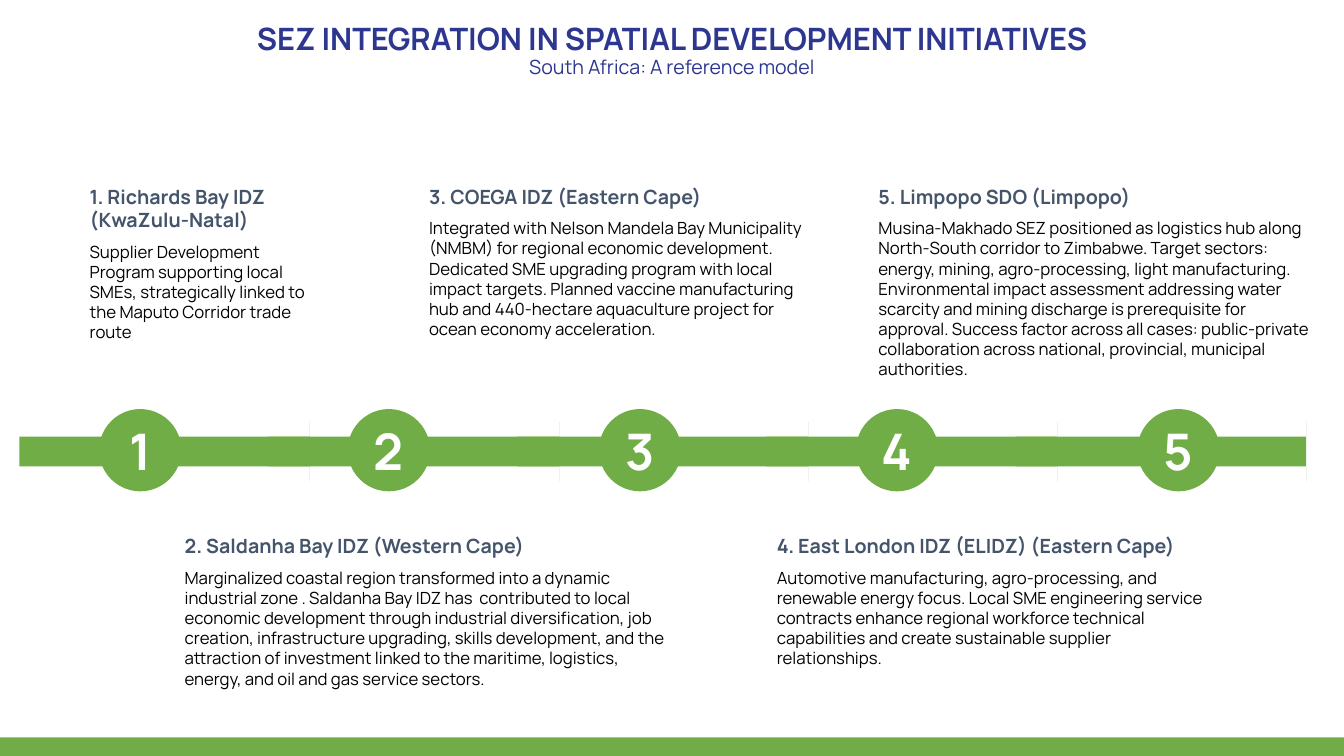
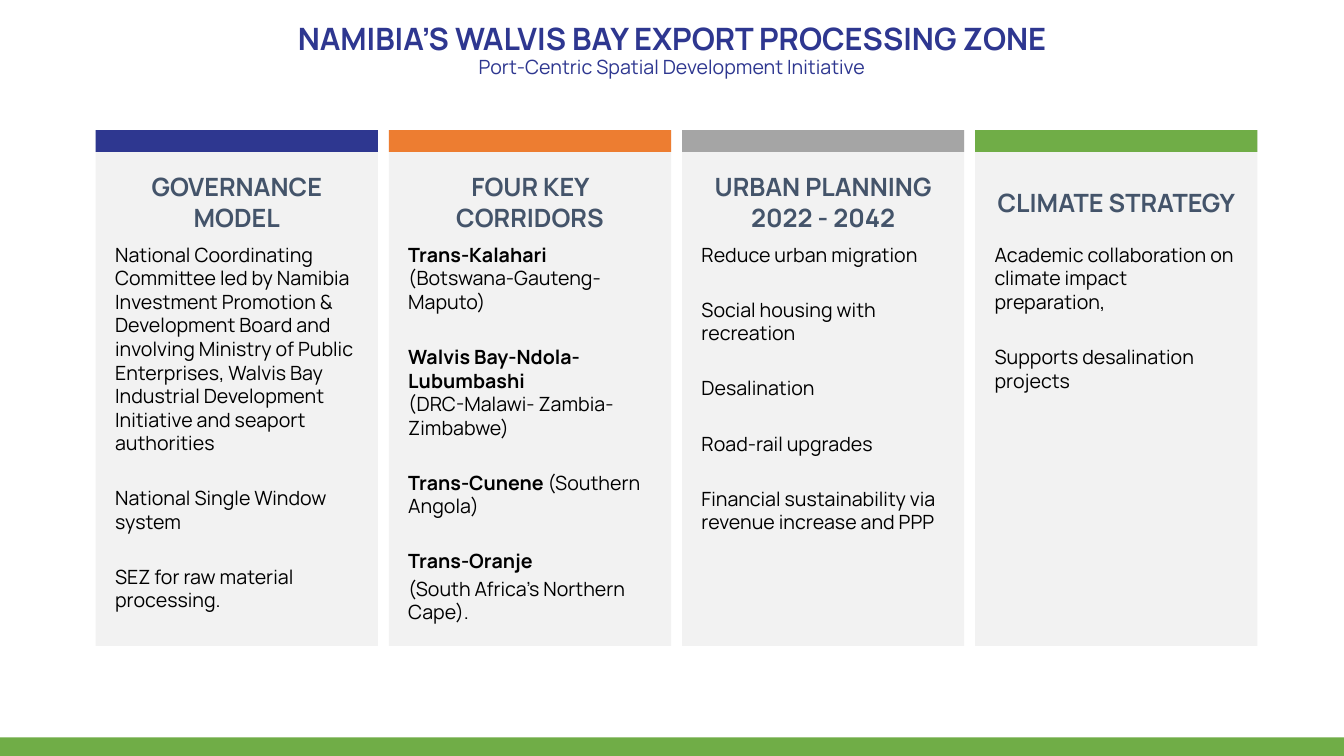
from dataclasses import dataclass

from lxml import etree
from pptx import Presentation
from pptx.dml.color import RGBColor
from pptx.enum.shapes import MSO_SHAPE
from pptx.enum.text import MSO_ANCHOR, MSO_AUTO_SIZE, PP_ALIGN
from pptx.oxml.ns import qn
from pptx.util import Inches, Pt

RECTANGLE = MSO_SHAPE.RECTANGLE
ELLIPSE = MSO_SHAPE.OVAL
ARROW = MSO_SHAPE.RIGHT_ARROW
TOP, MIDDLE = MSO_ANCHOR.TOP, MSO_ANCHOR.MIDDLE
LEFT, CENTER = PP_ALIGN.LEFT, PP_ALIGN.CENTER
NO_FIT = MSO_AUTO_SIZE.NONE

COLUMNS, ROWS = 160, 90
COMPARISON, TITLE_ONLY = 4, 5
FONT = "Manrope"
NAVY, GREEN, ORANGE, GRAY = "2E3790", "70AD47", "ED7D31", "A5A5A5"
SLATE, PALE, BLACK, WHITE = "44546A", "F2F2F2", "000000", "FFFFFF"
ITEM_GAP = 22.5


def color(value):
    return RGBColor.from_string(value)


@dataclass
class Para:
    text: str
    size: float = 14
    ink: str = BLACK
    bold: bool = False
    gap: float = 0
    tail: str = ""


class Deck:
    def __init__(self):
        self.show = Presentation()
        self.show.slide_width = Inches(13.333)
        self.show.slide_height = Inches(7.5)
        self.slide = None

    def box(self, left, top, width, height):
        column = self.show.slide_width / COLUMNS
        row = self.show.slide_height / ROWS
        return (round(left * column), round(top * row),
                round(width * column), round(height * row))

    def start(self, layout, title, subtitle):
        self.slide = self.show.slides.add_slide(self.show.slide_layouts[layout])
        heading = self.slide.shapes.title
        self.place(heading, 1.7, 2.3, 156.6, 9.4)
        self.typeset(heading, [Para(title, 22, NAVY, True), Para(subtitle, 14, NAVY)],
                     align=CENTER, spacing=0.9)
        self.shape(RECTANGLE, 0, 87.8, COLUMNS, 2.2, GREEN)

    def place(self, holder, *area):
        holder.left, holder.top, holder.width, holder.height = self.box(*area)

    def shape(self, kind, left, top, width, height, fill):
        drawn = self.slide.shapes.add_shape(kind, *self.box(left, top, width, height))
        drawn.shadow.inherit = False
        drawn.fill.solid()
        drawn.fill.fore_color.rgb = color(fill)
        drawn.line.fill.background()
        return drawn

    def text(self, left, top, width, height, paras, **layout):
        holder = self.slide.shapes.add_textbox(*self.box(left, top, width, height))
        self.typeset(holder, paras, **layout)

    def list(self, holder, left, top, width, height, paras):
        self.place(holder, left, top, width, height)
        holder.element.getparent().append(holder.element)
        self.typeset(holder, paras)

    def badge(self, left, top, size, label):
        circle = self.shape(ELLIPSE, left, top, size, size, GREEN)
        frame = circle.text_frame
        frame.margin_left = frame.margin_right = 0
        self.typeset(circle, [Para(label, 36, WHITE, True)], anchor=MIDDLE, align=CENTER)

    def typeset(self, holder, paras, anchor=TOP, align=LEFT, spacing=1.0):
        frame = holder.text_frame
        frame.word_wrap = True
        frame.auto_size = NO_FIT
        frame.vertical_anchor = anchor
        for index, para in enumerate(paras):
            line = frame.add_paragraph() if index else frame.paragraphs[0]
            properties = line._p.get_or_add_pPr()
            properties.set("marL", "0")
            properties.set("indent", "0")
            etree.SubElement(properties, qn("a:buNone"))
            line.alignment = align
            line.line_spacing = spacing
            line.space_before = Pt(para.gap if index else 0)
            for words, bold in ((para.text, para.bold), (para.tail, False)):
                if words:
                    run = line.add_run()
                    run.text = words
                    run.font.name = FONT
                    run.font.size = Pt(para.size)
                    run.font.bold = bold
                    run.font.color.rgb = color(para.ink)


UPPER, LOWER = 21.4, 63
ZONES = [
    (11.8, 9.5, UPPER, 28.8, "1. Richards Bay IDZ (KwaZulu-Natal)",
     "Supplier Development Program supporting local SMEs, strategically linked to "
     "the Maputo Corridor trade route"),
    (41.4, 20.8, LOWER, 61, "2. Saldanha Bay IDZ (Western Cape)",
     "Marginalized coastal region transformed into a dynamic industrial zone . "
     "Saldanha Bay IDZ has  contributed to local economic development through "
     "industrial diversification, job creation, infrastructure upgrading, skills "
     "development, and the attraction of investment linked to the maritime, "
     "logistics, energy, and oil and gas service sectors."),
    (71.3, 49.9, UPPER, 47, "3. COEGA IDZ (Eastern Cape)",
     "Integrated with Nelson Mandela Bay Municipality (NMBM) for regional economic "
     "development. Dedicated SME upgrading program with local impact targets. "
     "Planned vaccine manufacturing hub and 440-hectare aquaculture project for "
     "ocean economy acceleration."),
    (101.9, 91.3, LOWER, 53.3, "4. East London IDZ (ELIDZ) (Eastern Cape)",
     "Automotive manufacturing, agro-processing, and renewable energy focus. Local "
     "SME engineering service contracts enhance regional workforce technical "
     "capabilities and create sustainable supplier relationships."),
    (135.4, 103.4, UPPER, 54, "5. Limpopo SDO (Limpopo)",
     "Musina-Makhado SEZ positioned as logistics hub along North-South corridor to "
     "Zimbabwe. Target sectors: energy, mining, agro-processing, light "
     "manufacturing. Environmental impact assessment addressing water scarcity and "
     "mining discharge is prerequisite for approval. Success factor across all "
     "cases: public-private collaboration across national, provincial, municipal "
     "authorities."),
]


def items(*texts):
    return [Para(text, gap=ITEM_GAP) for text in texts]


def corridor(name, tail=""):
    return Para(name, bold=True, gap=ITEM_GAP, tail=tail)


PILLARS = [
    (NAVY, ["GOVERNANCE", "MODEL"], items(
        "National Coordinating Committee led by Namibia Investment Promotion & "
        "Development Board and involving Ministry of Public Enterprises, Walvis Bay "
        "Industrial Development Initiative and seaport authorities",
        "National Single Window system",
        "SEZ for raw material processing.")),
    (ORANGE, ["FOUR KEY CORRIDORS"], [
        corridor("Trans-Kalahari"),
        Para("(Botswana-Gauteng-Maputo)"),
        corridor("Walvis Bay-Ndola-Lubumbashi"),
        Para("(DRC-Malawi- Zambia- Zimbabwe)"),
        corridor("Trans-Cunene", " (Southern Angola)"),
        corridor("Trans-Oranje"),
        Para("(South Africa's Northern Cape).", gap=2.8)]),
    (GRAY, ["URBAN PLANNING", "2022 - 2042"], items(
        "Reduce urban migration",
        "Social housing with recreation",
        "Desalination",
        "Road-rail upgrades",
        "Financial sustainability via revenue increase and PPP")),
    (GREEN, ["CLIMATE STRATEGY"], items(
        "Academic collaboration on climate impact preparation,",
        "Supports desalination projects")),
]


def timeline(deck):
    deck.start(TITLE_ONLY, "SEZ INTEGRATION IN SPATIAL DEVELOPMENT INITIATIVES",
               "South Africa: A reference model")
    for step in reversed(range(len(ZONES))):
        segment = deck.shape(ARROW, 2.3 + 29.65 * step, 50.2, 34.6, 7.1, GREEN)
        segment.adjustments[0] = 0.5
        segment.adjustments[1] = 0
    for number, (badge_left, left, top, width, zone, story) in enumerate(ZONES, 1):
        deck.badge(badge_left, 48.7, 9.8, str(number))
        deck.text(left, top, width, 24,
                  [Para(zone, 14, SLATE, True), Para(story, 12, gap=7)])


def pillars(deck):
    deck.start(COMPARISON, "NAMIBIA’S WALVIS BAY EXPORT PROCESSING ZONE",
               "Port-Centric Spatial Development Initiative")
    bodies = [holder for holder in deck.slide.placeholders
              if holder.placeholder_format.idx]
    for index, (accent, heading, points) in enumerate(PILLARS):
        left = 11.4 + 34.9 * index
        deck.shape(RECTANGLE, left, 15.5, 33.6, 61.4, PALE)
        deck.shape(RECTANGLE, left, 15.5, 33.6, 2.6, accent)
        deck.text(left + 1.1, 19.8, 31.4, 8.5,
                  [Para(line, 18, SLATE, True) for line in heading],
                  anchor=MIDDLE, align=CENTER)
        deck.list(bodies[index], left + 1.1, 28.3, 31.4, 48.7, points)


def main():
    deck = Deck()
    timeline(deck)
    pillars(deck)
    deck.show.save("out.pptx")


if __name__ == "__main__":
    main()
